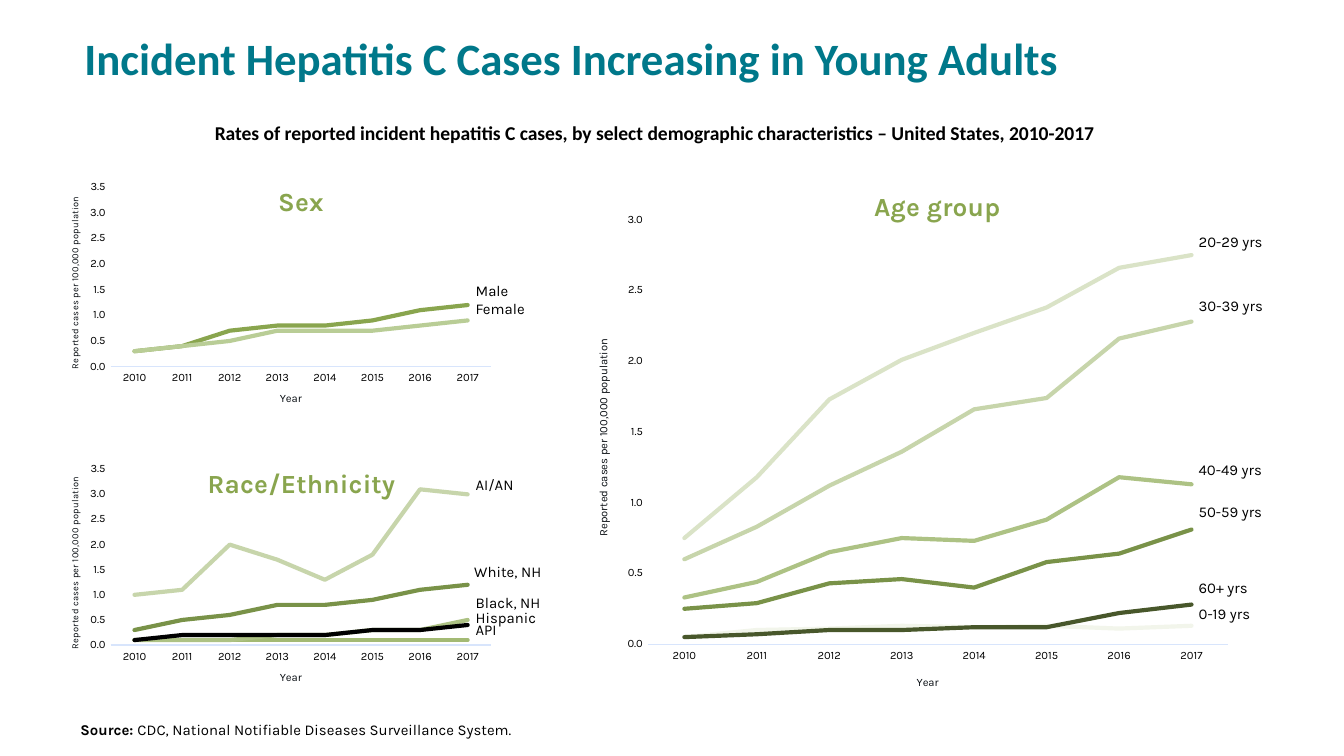
from dataclasses import dataclass

from lxml import etree
from pptx import Presentation, util as u
from pptx.chart.data import CategoryChartData
from pptx.dml.color import RGBColor
from pptx.enum import chart as ch, text
from pptx.oxml.ns import qn


@dataclass(frozen=True)
class Theme:
    heading: str = "Calibri"
    body: str = "Karla"
    teal: str = "00788A"
    green: str = "89A54E"
    ink: str = "000000"
    axis_title: str = "070C11"
    axis_line: str = "D8E5FC"
    title_size: float = 24
    subtitle_size: float = 10.5
    panel_size: float = 14
    label_size: float = 8
    tick_size: float = 6
    line_width: float = 2.25


@dataclass(frozen=True)
class Box:
    col: float
    row: float
    cols: float
    rows: float


@dataclass(frozen=True)
class Label:
    text: str
    row: float
    col: float
    cols: float = 7.1


@dataclass(frozen=True)
class Panel:
    title: str
    title_at: tuple[float, float]
    box: Box
    plot: tuple[float, float, float, float]
    top: float
    value_title_size: float
    series: list[tuple[str, list[float]]]
    labels: list[Label]


THEME = Theme()
COLUMNS, ROWS = 100, 56.25
WIDTH, HEIGHT = u.Inches(10), u.Inches(5.625)
YEARS = [str(year) for year in range(2010, 2018)]

PANELS = [
    Panel("Age group", (0.41, 0.044), Box(43.4, 11.9, 51.9, 42.4),
          (0.093, 0.105, 0.831, 0.745), 3, 6,
          [("F2F5EB", [0.05, 0.1, 0.11, 0.13, 0.12, 0.13, 0.11, 0.13]),
           ("DAE3C7", [0.75, 1.18, 1.73, 2.01, 2.2, 2.38, 2.66, 2.75]),
           ("C7D5AB", [0.6, 0.83, 1.12, 1.36, 1.66, 1.74, 2.16, 2.28]),
           ("ADC284", [0.33, 0.44, 0.65, 0.75, 0.73, 0.88, 1.18, 1.13]),
           ("799248", [0.25, 0.29, 0.43, 0.46, 0.4, 0.58, 0.64, 0.81]),
           ("48572B", [0.05, 0.07, 0.1, 0.1, 0.12, 0.12, 0.22, 0.28])],
          [Label("20-29 yrs", 16.8, 88.2), Label("30-39 yrs", 21.6, 88.2),
           Label("40-49 yrs", 33.8, 88.2), Label("50-59 yrs", 36.9, 88.2),
           Label("60+ yrs", 42.6, 88.2), Label("0-19 yrs", 44.5, 88.2)]),
    Panel("Race/Ethnicity", (0.296, 0.078), Box(5, 32.9, 34.1, 18.7),
          (0.095, 0.108, 0.831, 0.7), 3.5, 5,
          [("C7D5AB", [1, 1.1, 2, 1.7, 1.3, 1.8, 3.1, 3]),
           ("A3BA74", [0.1] * 8),
           ("ADC284", [0.1, 0.1, 0.1, 0.2, 0.2, 0.3, 0.3, 0.5]),
           ("799248", [0.3, 0.5, 0.6, 0.8, 0.8, 0.9, 1.1, 1.2]),
           ("000000", [0.1, 0.2, 0.2, 0.2, 0.2, 0.3, 0.3, 0.4])],
          [Label("AI/AN", 34.9, 34.4, 14.3), Label("White, NH", 41.4, 34.3, 9.2),
           Label("Black, NH", 43.7, 34.4), Label("Hispanic", 44.8, 34.4),
           Label("API", 45.7, 34.4, 14.1)]),
    Panel("Sex", (0.45, 0.078), Box(5, 11.9, 34.1, 18.7),
          (0.095, 0.108, 0.831, 0.715), 3.5, 5,
          [("89A54E", [0.3, 0.4, 0.7, 0.8, 0.8, 0.9, 1.1, 1.2]),
           ("B9CD96", [0.3, 0.4, 0.5, 0.7, 0.7, 0.7, 0.8, 0.9])],
          [Label("Male", 20.5, 34.4), Label("Female", 21.8, 34.4)]),
]


def place(box: Box) -> tuple[int, int, int, int]:
    return (int(WIDTH * box.col / COLUMNS), int(HEIGHT * box.row / ROWS),
            int(WIDTH * box.cols / COLUMNS), int(HEIGHT * box.rows / ROWS))


def set_font(font, size: float, color: str, name: str, bold: bool | None = False) -> None:
    font.size, font.name, font.bold = u.Pt(size), name, bold
    font.color.rgb = RGBColor.from_string(color)


def add_text(slide, box: Box, content: str, size: float, color: str = THEME.ink,
             name: str = THEME.body, bold: bool | None = False):
    tf = slide.shapes.add_textbox(*place(box)).text_frame
    tf.word_wrap = True
    tf.vertical_anchor = text.MSO_ANCHOR.TOP
    p = tf.paragraphs[0]
    p.text = content
    set_font(p.font, size, color, name, bold)
    return tf


def set_layout(parent, index: int, values: dict[str, float | str]) -> None:
    for old in parent.findall(qn("c:layout")):
        parent.remove(old)
    layout = etree.Element(qn("c:layout"))
    manual = etree.SubElement(layout, qn("c:manualLayout"))
    for tag, value in values.items():
        etree.SubElement(manual, qn(f"c:{tag}")).set("val", str(value))
    parent.insert(index, layout)


def add_title(owner, content: str, size: float, color: str, bold: bool = False) -> None:
    p = owner.text_frame.paragraphs[0]
    p.text = content
    set_font(p.font, size, color, THEME.body, bold)


def style_axis(axis, title: str, title_size: float) -> None:
    axis.has_major_gridlines = False
    axis.major_tick_mark = axis.minor_tick_mark = ch.XL_TICK_MARK.NONE
    set_font(axis.tick_labels.font, THEME.tick_size, THEME.ink, THEME.body)
    add_title(axis.axis_title, title, title_size, THEME.axis_title)


def add_panel(slide, panel: Panel) -> None:
    data = CategoryChartData(number_format="General")
    data.categories = YEARS
    for number, (_, values) in enumerate(panel.series, 1):
        data.add_series(f"Series {number}", values)
    chart = slide.shapes.add_chart(ch.XL_CHART_TYPE.LINE, *place(panel.box), data).chart
    chart.has_legend = False
    set_font(chart.font, 10, THEME.ink, THEME.heading)

    add_title(chart.chart_title, panel.title, THEME.panel_size, THEME.green, True)
    chart.chart_title.include_in_layout = True
    x, y = panel.title_at
    set_layout(chart.chart_title._element, 1,
               {"xMode": "edge", "yMode": "edge", "x": x, "y": y})
    x, y, w, h = panel.plot
    set_layout(chart._chartSpace.chart.plotArea, 0,
               {"layoutTarget": "inner", "xMode": "edge", "yMode": "edge",
                "x": x, "y": y, "w": w, "h": h})

    years, rates = chart.category_axis, chart.value_axis
    style_axis(years, "Year", THEME.tick_size)
    years.format.line.color.rgb = RGBColor.from_string(THEME.axis_line)
    years.format.line.width = u.Pt(0.75)
    style_axis(rates, "Reported cases per 100,000 population", panel.value_title_size)
    rates.axis_title.text_frame._txBody.bodyPr.set("rot", "-5400000")
    rates.format.line.fill.background()
    rates.minimum_scale, rates.maximum_scale, rates.major_unit = 0, panel.top, 0.5
    rates.tick_labels.number_format = "0.0"
    rates.tick_labels.number_format_is_linked = False

    chart.plots[0].vary_by_categories = False
    for series, (color, _) in zip(chart.plots[0].series, panel.series):
        series.smooth = False
        series.format.line.color.rgb = RGBColor.from_string(color)
        series.format.line.width = u.Pt(THEME.line_width)
        series.format.line._get_or_add_ln().set("cap", "rnd")


def main() -> None:
    prs = Presentation()
    prs.slide_width, prs.slide_height = WIDTH, HEIGHT
    slide = prs.slides.add_slide(prs.slide_layouts[6])

    tf = add_text(slide, Box(5.3, 2.2, 90, 6.7),
                  "Incident Hepatitis C Cases Increasing in Young Adults",
                  THEME.title_size, THEME.teal, THEME.heading, True)
    tf.margin_top = u.Inches(0.01)
    for panel in PANELS:
        add_panel(slide, panel)
    for panel in PANELS:
        for label in panel.labels:
            add_text(slide, Box(label.col, label.row, label.cols, 2.4),
                     label.text, THEME.label_size)

    tf = add_text(slide, Box(5, 53.1, 90, 2.4), "", THEME.label_size, bold=None)
    for content, bold in (("Source: ", True),
                          ("CDC, National Notifiable Diseases Surveillance System.", False)):
        r = tf.paragraphs[0].add_run()
        r.text, r.font.bold = content, bold
    add_text(slide, Box(15, 8.5, 68.4, 4.5),
             "Rates of reported incident hepatitis C cases, by select demographic "
             "characteristics – United States, 2010-2017",
             THEME.subtitle_size, name=THEME.heading, bold=True)
    prs.save("out.pptx")


if __name__ == "__main__":
    main()
